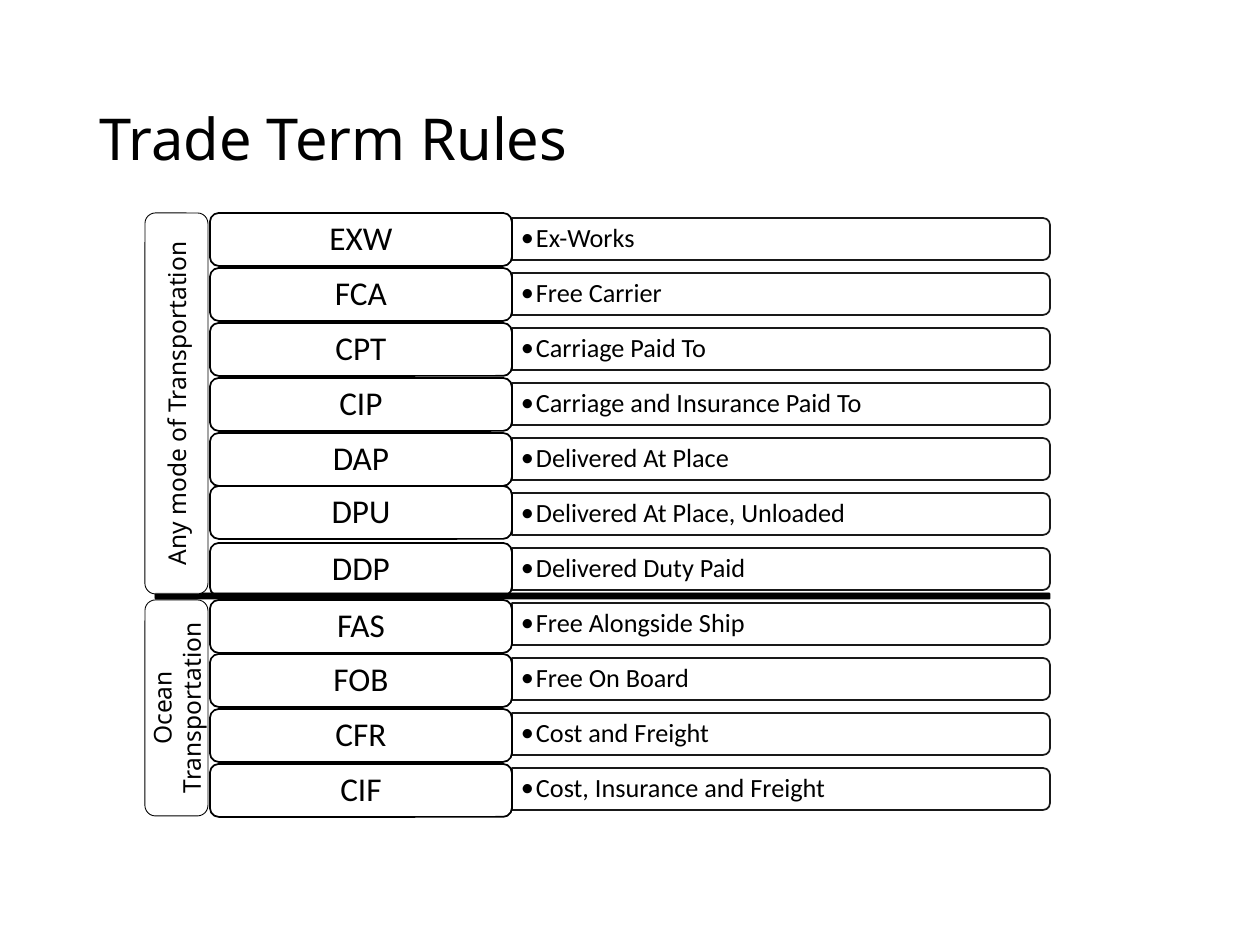
from lxml.etree import SubElement
from pptx import Presentation
from pptx.dml.color import RGBColor
from pptx.enum.shapes import MSO_SHAPE
from pptx.enum.text import MSO_ANCHOR, PP_ALIGN
from pptx.oxml.ns import qn
from pptx.util import Emu, Pt

BLACK = RGBColor(0, 0, 0)
WHITE = RGBColor(255, 255, 255)
HEAD_FONT, BODY_FONT = "Noto Sans", "Calibri"

ROW_PITCH, TERM_HEIGHT = 55, 53
TERM_WIDTH, MEANING_WIDTH, MEANING_HEIGHT = 302, 538, 42

# Term, meaning, and how far the term box sits off the even row grid
RULES = [
    ("EXW", "Ex-Works", 0),
    ("FCA", "Free Carrier", 0),
    ("CPT", "Carriage Paid To", 0),
    ("CIP", "Carriage and Insurance Paid To", 0),
    ("DAP", "Delivered At Place", 0),
    ("DPU", "Delivered At Place, Unloaded", -2),
    ("DDP", "Delivered Duty Paid", 0),
    ("FAS", "Free Alongside Ship", 2),
    ("FOB", "Free On Board", 1),
    ("CFR", "Cost and Freight", 1),
    ("CIF", "Cost, Insurance and Freight", 1),
]


def px(count):
    return Emu(round(count * 914400 / 126))


def set_alpha(fill_parent, percent):
    color = fill_parent.find(qn("a:solidFill"))[0]
    SubElement(color, qn("a:alpha"), val=str(percent * 1000))


def add_panel(page, kind, box, line_width, fill=WHITE, opacity=100):
    panel = page.shapes.add_shape(kind, *map(px, box))
    panel.shadow.inherit = False
    panel.fill.solid()
    panel.fill.fore_color.rgb = fill
    panel.line.color.rgb = BLACK
    panel.line.width = Pt(line_width)
    if opacity < 100:
        set_alpha(panel.fill._xPr, opacity)
    return panel


def write(shape, text, size, font, align, spacing=None, bullet=False):
    frame = shape.text_frame
    frame.word_wrap = True
    frame.vertical_anchor = MSO_ANCHOR.MIDDLE
    para = frame.paragraphs[0]
    para.text = text
    para.alignment = align
    if spacing:
        para.line_spacing = spacing
    if bullet:
        props = para._p.get_or_add_pPr()
        props.set("marL", str(px(15)))
        props.set("indent", str(-px(15)))
        SubElement(props, qn("a:buFont"), typeface=font)
        SubElement(props, qn("a:buChar"), char="•")
    para.font.size = Pt(size)
    para.font.name = font
    para.font.color.rgb = BLACK
    return frame


def set_insets(frame, across, down):
    frame.margin_left = frame.margin_right = px(across)
    frame.margin_top = frame.margin_bottom = px(down)


def add_title(page, box):
    title = page.shapes.title
    title.left, title.top, title.width, title.height = map(px, box)
    write(title, "Trade Term Rules", 33, HEAD_FONT, PP_ALIGN.LEFT, 0.9)


def add_meaning(page, left, top, meaning):
    # The panel is a tall shape turned a quarter, so its round end faces right
    offset = (MEANING_WIDTH - MEANING_HEIGHT) / 2
    box = (left + offset, top - offset, MEANING_HEIGHT, MEANING_WIDTH)
    panel = add_panel(page, MSO_SHAPE.ROUND_2_SAME_RECTANGLE, box, 1, opacity=90)
    panel.rotation = 90
    set_alpha(panel.line._ln, 90)
    label = page.shapes.add_textbox(
        px(left + 1), px(top + 2), px(MEANING_WIDTH - 3), px(MEANING_HEIGHT - 4))
    frame = write(label, meaning, 15, BODY_FONT, PP_ALIGN.LEFT, 0.9, bullet=True)
    set_insets(frame, 8, 4)


def add_rules(page, left, top):
    for row, (term, meaning, shift) in enumerate(RULES):
        row_top = top + row * ROW_PITCH
        add_meaning(page, left + TERM_WIDTH, row_top + 5, meaning)
        box = (left, row_top + shift, TERM_WIDTH, TERM_HEIGHT)
        panel = add_panel(page, MSO_SHAPE.ROUNDED_RECTANGLE, box, 1,
                          opacity=100 if row < 3 else 90)
        set_insets(write(panel, term, 19, BODY_FONT, PP_ALIGN.CENTER, 0.9), 13, 8)


def add_mode(page, box, text):
    panel = add_panel(page, MSO_SHAPE.ROUNDED_RECTANGLE, box, 0.5, opacity=80)
    frame = write(panel, text, 14, HEAD_FONT, PP_ALIGN.CENTER)
    frame._txBody.bodyPr.set("vert", "vert270")


def main():
    deck = Presentation()
    deck.slide_width, deck.slide_height = px(1260), px(945)
    page = deck.slides.add_slide(deck.slide_layouts[5])

    add_title(page, (87, 50, 1086, 183))
    add_rules(page, 210, 213)
    # Divider between the two transport modes
    add_panel(page, MSO_SHAPE.ROUNDED_RECTANGLE, (155, 593, 895, 6), 0.5, BLACK)
    add_mode(page, (145, 213, 63, 381), "Any mode of Transportation")
    add_mode(page, (145, 600, 63, 216), "Ocean Transportation")

    deck.save("out.pptx")


if __name__ == "__main__":
    main()
